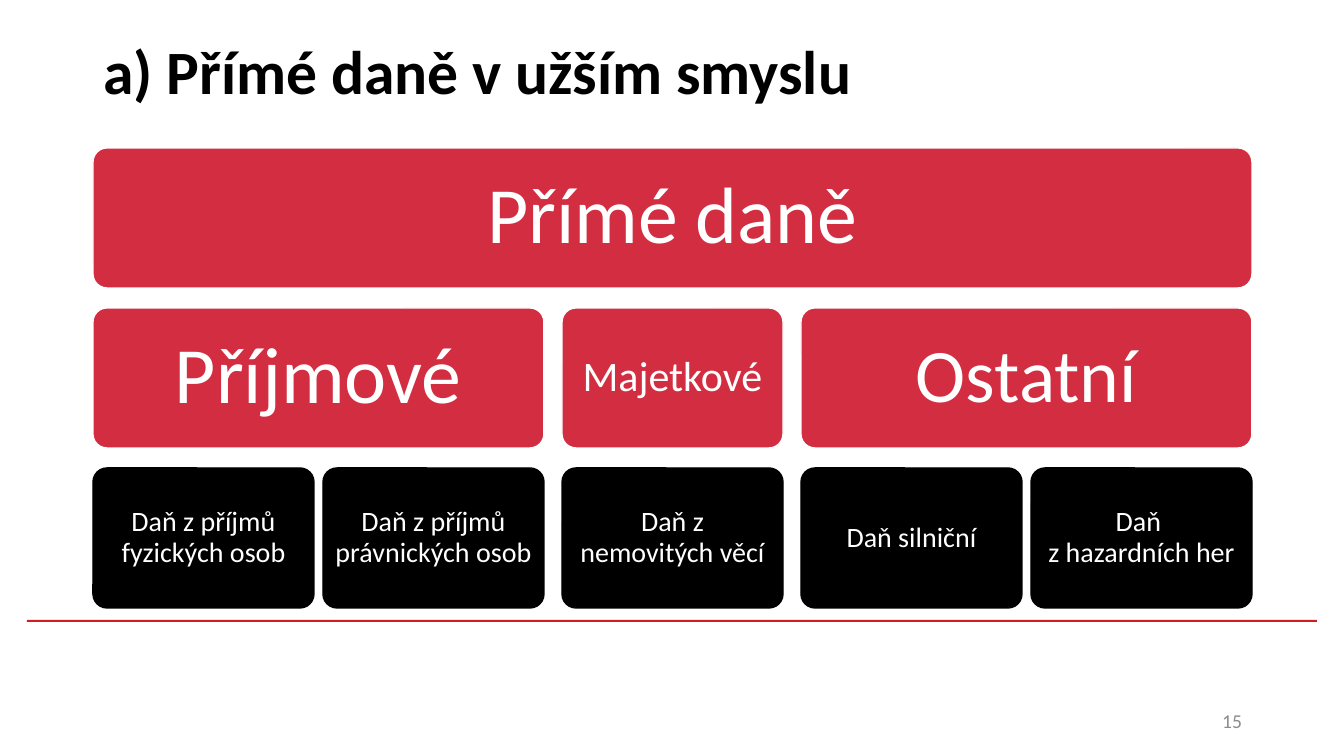
import pptx
import pptx.dml.color
import pptx.enum.shapes
import pptx.enum.text
import pptx.util

PX = 914400 / 100.8
FONT = "Calibri"
RED, BLACK, WHITE = "D22D40", "000000", "FFFFFF"
RULE_RED, GREY = "CD1F21", "8C8C8C"
ALIGN = pptx.enum.text.PP_ALIGN
SHAPES = pptx.enum.shapes.MSO_SHAPE

LEAF_WIDTH, LEAF_GAP, GROUP_GAP = 221, 9, 18
ROW_HEIGHT, ROW_PITCH = 140, 160
ROOT = ("Přímé daně", 57, 24)
GROUPS = [
    (("Příjmové", 57, 24), ["Daň z příjmů fyzických osob", "Daň z příjmů právnických osob"]),
    (("Majetkové", 30, 12), ["Daň z nemovitých věcí"]),
    (("Ostatní", 54, 23), ["Daň silniční", "Daň \vz hazardních her"]),
]


def px(length):
    return pptx.util.Emu(round(length * PX))


def color(hex_string):
    return pptx.dml.color.RGBColor.from_string(hex_string)


def write(shape, text, *, size, fill, bold=False, align=ALIGN.CENTER, spacing=None, inset=None):
    frame = shape.text_frame
    frame.word_wrap = True
    frame.auto_size = pptx.enum.text.MSO_AUTO_SIZE.NONE
    frame.vertical_anchor = pptx.enum.text.MSO_ANCHOR.MIDDLE
    if inset is not None:
        frame.margin_left = frame.margin_right = px(inset)
        frame.margin_top = frame.margin_bottom = px(inset)
    frame.text = text
    paragraph = frame.paragraphs[0]
    paragraph.alignment = align
    paragraph.line_spacing = spacing
    for run in paragraph.runs:
        run.font.name = FONT
        run.font.size = pptx.util.Pt(size)
        run.font.bold = bold
        run.font.color.rgb = color(fill)


def add_title(slide, left, top, width, height):
    title = slide.shapes.title
    title.left, title.top, title.width, title.height = map(px, (left, top, width, height))
    write(title, "a) Přímé daně v užším smyslu", size=44, fill=BLACK, bold=True, align=ALIGN.LEFT, spacing=0.9)


def add_card(slide, left, top, width, label, fill, line):
    text, size, inset = label
    card = slide.shapes.add_shape(SHAPES.ROUNDED_RECTANGLE, px(left), px(top), px(width), px(ROW_HEIGHT))
    card.adjustments[0] = 0.1
    card.shadow.inherit = False
    card.fill.solid()
    card.fill.fore_color.rgb = color(fill)
    card.line.color.rgb = color(line)
    card.line.width = pptx.util.Pt(1)
    write(card, text, size=size, fill=WHITE, spacing=0.9, inset=inset)


def add_hierarchy(slide, left, top, width):
    add_card(slide, left, top, width, ROOT, RED, WHITE)
    group_left = left
    for label, leaves in GROUPS:
        group_width = len(leaves) * (LEAF_WIDTH + LEAF_GAP) - LEAF_GAP
        add_card(slide, group_left, top + ROW_PITCH, group_width, label, RED, WHITE)
        for index, leaf in enumerate(leaves):
            leaf_left = group_left + index * (LEAF_WIDTH + LEAF_GAP)
            add_card(slide, leaf_left, top + 2 * ROW_PITCH, LEAF_WIDTH, (leaf, 20, 8), BLACK, BLACK)
        group_left += group_width + GROUP_GAP


def add_footer(slide, left, top, width):
    rule = slide.shapes.add_shape(SHAPES.RECTANGLE, px(left), px(top), px(width), px(2))
    rule.shadow.inherit = False
    rule.fill.solid()
    rule.fill.fore_color.rgb = color(RULE_RED)
    rule.line.fill.background()
    number = slide.shapes.add_textbox(px(left + 923), px(top + 81), px(302), px(40))
    write(number, "15", size=14, fill=GREY, align=ALIGN.RIGHT)


def main():
    presentation = pptx.Presentation()
    presentation.slide_width, presentation.slide_height = px(1344), px(756)
    slide = presentation.slides.add_slide(presentation.slide_layouts[5])
    add_footer(slide, 27, 620, 1290)
    add_title(slide, 93, 2, 1159, 146)
    add_hierarchy(slide, 93, 148, 1159)
    presentation.save("out.pptx")


if __name__ == "__main__":
    main()
